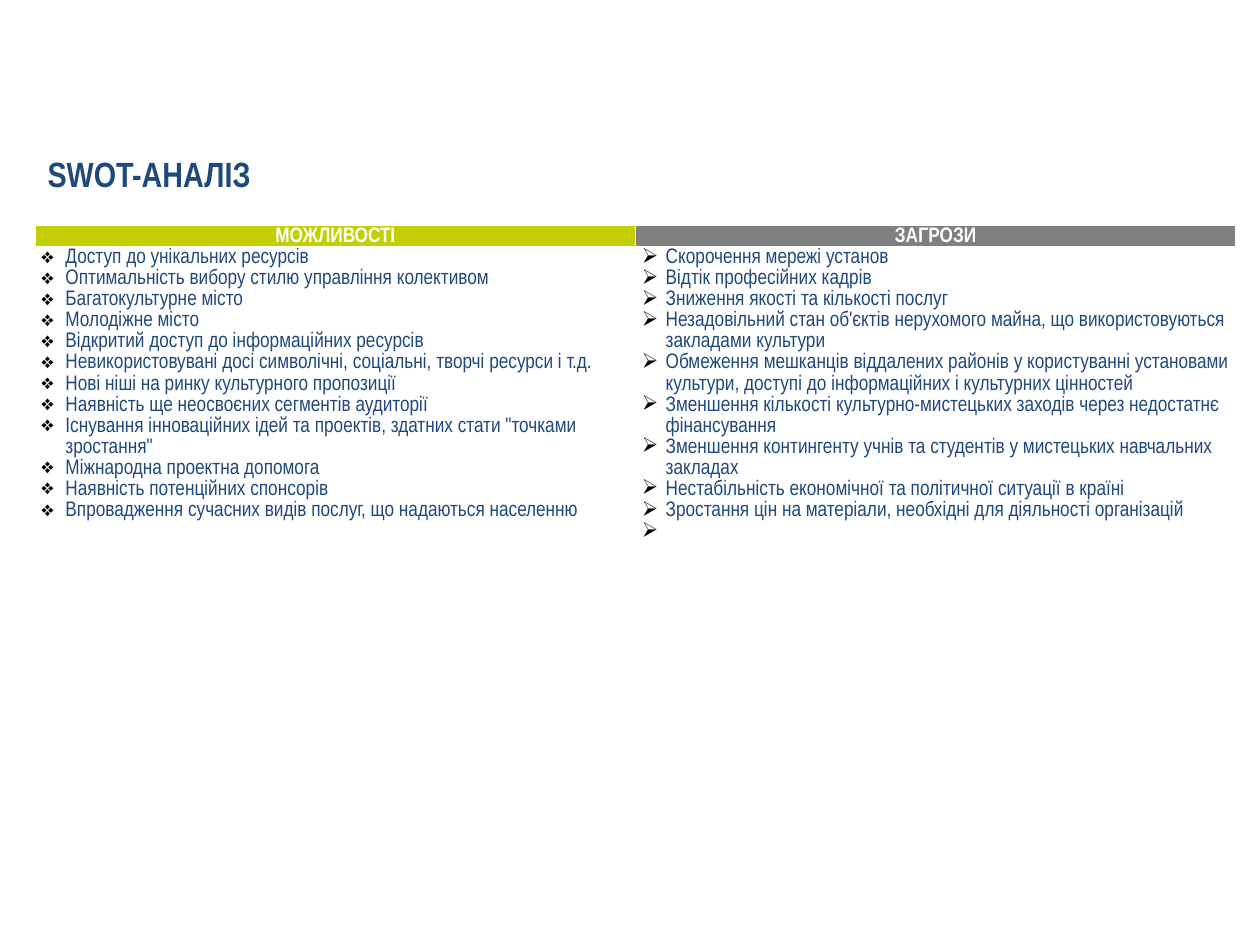
from lxml.etree import SubElement
from pptx import Presentation
from pptx.dml.color import RGBColor
from pptx.enum.text import PP_ALIGN
from pptx.oxml.ns import qn
from pptx.util import Cm, Pt

FONT = "Arial Narrow"
NAVY, WHITE = "1F497D", "FFFFFF"

CHANCES = [
    "Доступ до унікальних ресурсів",
    "Оптимальність вибору стилю управління колективом",
    "Багатокультурне місто",
    "Молодіжне місто",
    "Відкритий доступ до інформаційних ресурсів",
    "Невикористовувані досі символічні, соціальні, творчі ресурси і т.д.",
    "Нові ніші на ринку культурного пропозиції",
    "Наявність ще неосвоєних сегментів аудиторії",
    'Існування інноваційних ідей та проектів, здатних стати "точками зростання"',
    "Міжнародна проектна допомога",
    "Наявність потенційних спонсорів",
    "Впровадження сучасних видів послуг, що надаються населенню",
]
# The last threat is an open item: only its bullet shows
THREATS = [
    "Скорочення мережі установ",
    "Відтік професійних кадрів",
    "Зниження якості та кількості послуг",
    "Незадовільний стан об'єктів нерухомого майна, що використовуються "
    "закладами культури",
    "Обмеження мешканців віддалених районів у користуванні установами "
    "культури, доступі до інформаційних і культурних цінностей",
    "Зменшення кількості культурно-мистецьких заходів через недостатнє "
    "фінансування",
    "Зменшення контингенту учнів та студентів у мистецьких навчальних закладах",
    "Нестабільність економічної та політичної ситуації в країні",
    "Зростання цін на матеріали, необхідні для діяльності організацій",
    " ",
]
# Heading, header fill, bullet, items
COLUMNS = [
    ("МОЖЛИВОСТІ", "C3CF02", "❖", CHANCES),
    ("ЗАГРОЗИ", "808080", "➢", THREATS),
]


def color(code):
    return RGBColor.from_string(code)


def style(para, size, code, bold):
    para.line_spacing = 1.07
    for run in para.runs:
        font = run.font
        font.name, font.size, font.bold = FONT, Pt(size), bold
        font.color.rgb = color(code)


def add_bullet(para, mark):
    props = para._p.get_or_add_pPr()
    props.set("marL", str(Cm(0.48)))
    props.set("indent", str(-Cm(0.48)))
    tint = SubElement(props, qn("a:buClr"))
    SubElement(tint, qn("a:srgbClr")).set("val", "000000")
    SubElement(props, qn("a:buChar")).set("char", mark)


def set_pads(cell):
    cell.margin_left = cell.margin_right = Cm(0.13)
    cell.margin_top = cell.margin_bottom = 0


def fill_head(cell, text, code):
    set_pads(cell)
    cell.fill.solid()
    cell.fill.fore_color.rgb = color(code)
    cell.text_frame.text = text
    para = cell.text_frame.paragraphs[0]
    para.alignment = PP_ALIGN.CENTER
    style(para, 12, WHITE, True)


def fill_list(cell, mark, items):
    set_pads(cell)
    cell.fill.background()
    cell.text_frame.text = "\n".join(items)
    for para in cell.text_frame.paragraphs:
        add_bullet(para, mark)
        style(para, 12, NAVY, False)


def add_title(slide, text):
    box = slide.shapes.add_textbox(Cm(0.71), Cm(2.9), Cm(4.67), Cm(1.12))
    box.text_frame.word_wrap = False
    box.text_frame.text = text
    style(box.text_frame.paragraphs[0], 20, NAVY, True)


def add_grid(slide):
    frame = slide.shapes.add_table(
        2, len(COLUMNS), Cm(0.71), Cm(4.55), Cm(24.2), Cm(5.24))
    table = frame.table
    table.first_row = table.horz_banding = False
    table.rows[0].height = Cm(0.36)
    table.rows[1].height = Cm(4.88)
    for col, (head, code, mark, items) in enumerate(COLUMNS):
        fill_head(table.cell(0, col), head, code)
        fill_list(table.cell(1, col), mark, items)


def main():
    deck = Presentation()
    deck.slide_width, deck.slide_height = Cm(25.4), Cm(19.05)
    slide = deck.slides.add_slide(deck.slide_layouts[6])
    add_grid(slide)
    add_title(slide, "SWOT-АНАЛІЗ")
    deck.save("out.pptx")


if __name__ == "__main__":
    main()
